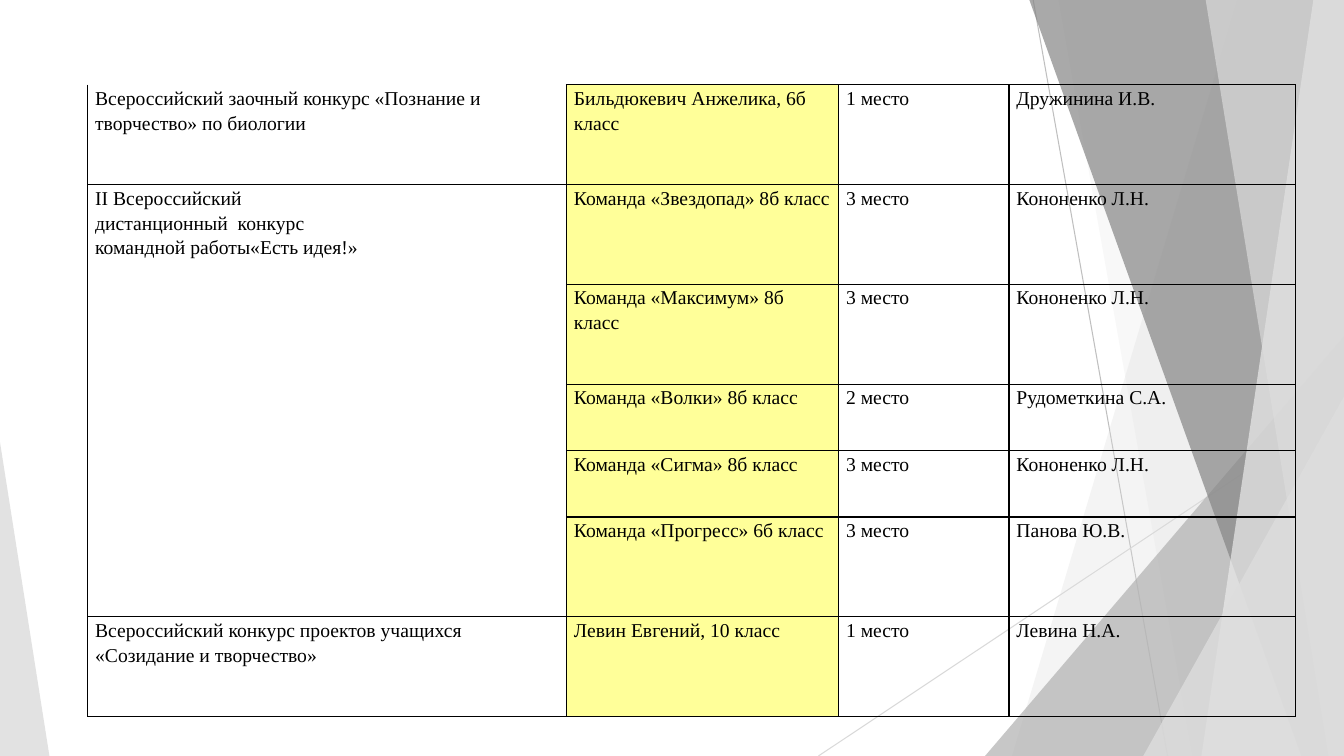
from lxml import etree
from pptx import Presentation
from pptx.dml.color import RGBColor
from pptx.enum import shapes as kinds
from pptx.oxml import ns
from pptx.util import Pt

WIDTH, HEIGHT = 960, 540
FONT = "Times New Roman"
COLORS = {
    "ink": "000000",
    "yellow": "FFFF99",
    "line_dark": "BFBFBF",
    "line_light": "D9D9D9",
    "light": "DDDDDD",
    "pale": "EBEBEB",
    "middle": "B2B2B2",
    "dark": "858585",
}
COLUMNS = [342, 194.4, 121.7, 204.5]
HEIGHTS = [71.3, 71.3, 71.3, 47.5, 47.5, 71.3, 71.3]
TEAM_CONTEST = "II Всероссийский\nдистанционный  конкурс\nкомандной работы«Есть идея!»"
RESULTS = [
    ("Всероссийский заочный конкурс «Познание и творчество» по биологии",
     "Бильдюкевич Анжелика, 6б класс", "1 место", "Дружинина И.В."),
    (TEAM_CONTEST, "Команда «Звездопад» 8б класс", "3 место", "Кононенко Л.Н."),
    ("", "Команда «Максимум» 8б класс", "3 место", "Кононенко Л.Н."),
    ("", "Команда «Волки» 8б класс", "2 место", "Рудометкина С.А."),
    ("", "Команда «Сигма» 8б класс", "3 место", "Кононенко Л.Н."),
    ("", "Команда «Прогресс» 6б класс", "3 место", "Панова Ю.В."),
    ("Всероссийский конкурс проектов учащихся «Созидание и творчество»",
     "Левин Евгений, 10 класс", "1 место", "Левина Н.А."),
]


def color(name):
    return RGBColor.from_string(COLORS[name])


def add_line(slide, start, end, color_name):
    line = slide.shapes.add_connector(
        kinds.MSO_CONNECTOR.STRAIGHT, *map(Pt, start + end))
    line.line.color.rgb = color(color_name)
    line.line.width = Pt(0.75)
    etree.SubElement(line._element.spPr, ns.qn("a:effectLst"))


def paint(shape, color_name, opacity):
    shape.shadow.inherit = False
    shape.line.fill.background()
    shape.fill.solid()
    shape.fill.fore_color.rgb = color(color_name)
    tint = shape._element.spPr.find(".//" + ns.qn("a:srgbClr"))
    etree.SubElement(tint, ns.qn("a:alpha"), val=str(opacity * 1000))


def add_band(slide, top_x, bottom_x, color_name, opacity):
    top = -0.6
    builder = slide.shapes.build_freeform(Pt(top_x), Pt(top))
    corners = [(WIDTH, top), (WIDTH, HEIGHT), (bottom_x, HEIGHT)]
    builder.add_line_segments([(Pt(x), Pt(y)) for x, y in corners], close=True)
    paint(builder.convert_to_shape(), color_name, opacity)


def add_triangle(slide, left, top, width, apex, color_name, opacity):
    shape = slide.shapes.add_shape(
        kinds.MSO_SHAPE.ISOSCELES_TRIANGLE,
        Pt(left), Pt(top), Pt(width), Pt(HEIGHT - top))
    shape.adjustments[0] = apex
    paint(shape, color_name, opacity)


def set_borders(cell, visible):
    properties = cell._tc.get_or_add_tcPr()
    for position, side in enumerate("LRTB"):
        border = etree.Element(ns.qn("a:ln" + side), w=str(Pt(1)))
        if side in visible:
            fill = etree.SubElement(border, ns.qn("a:solidFill"))
            etree.SubElement(fill, ns.qn("a:srgbClr"), val=COLORS["ink"])
        else:
            etree.SubElement(border, ns.qn("a:noFill"))
        properties.insert(position, border)


def write_cell(cell, content):
    cell.margin_left = cell.margin_right = Pt(5.4)
    cell.margin_top = cell.margin_bottom = Pt(0)
    frame = cell.text_frame
    for index, words in enumerate(content.split("\n")):
        paragraph = frame.add_paragraph() if index else frame.paragraphs[0]
        paragraph.line_spacing = 1.15
        if words:
            run = paragraph.add_run()
            run.text = words
            run.font.name = FONT
            run.font.size = Pt(14)
            run.font.color.rgb = color("ink")


def contest_borders(row):
    starts_contest = row > 0 and RESULTS[row][0]
    ends_contest = row + 1 == len(RESULTS) or RESULTS[row + 1][0]
    return "LR" + ("T" if starts_contest else "") + ("B" if ends_contest else "")


def add_results(slide):
    table = slide.shapes.add_table(
        len(RESULTS), len(COLUMNS), Pt(62.6), Pt(60.5),
        Pt(sum(COLUMNS)), Pt(sum(HEIGHTS))).table
    table.first_row = table.horz_banding = False
    for column, width in zip(table.columns, COLUMNS):
        column.width = Pt(width)
    for row, (contents, height) in enumerate(zip(RESULTS, HEIGHTS)):
        table.rows[row].height = Pt(height)
        for column, content in enumerate(contents):
            cell = table.cell(row, column)
            write_cell(cell, content)
            if column == 1:
                cell.fill.solid()
                cell.fill.fore_color.rgb = color("yellow")
            else:
                cell.fill.background()
            set_borders(cell, "LRTB" if column else contest_borders(row))


def add_backdrop(slide):
    add_line(slide, (738, 0), (834, HEIGHT), "line_dark")
    add_line(slide, (WIDTH, 290), (584.6, HEIGHT), "line_light")
    add_band(slide, 884.2, 722.9, "light", 30)
    add_band(slide, 756, 851.8, "light", 20)
    add_triangle(slide, 703.6, 240, 256.4, 1, "middle", 72)
    add_band(slide, 735.1, 929.5, "dark", 70)
    add_band(slide, 938.2, 858.2, "pale", 70)
    add_band(slide, 861.1, 949, "light", 65)
    add_triangle(slide, 816.6, 283, 143.4, 1, "light", 80)
    add_triangle(slide, 0, 316, 35.3, 0, "light", 85)


def main():
    presentation = Presentation()
    presentation.slide_width = Pt(WIDTH)
    presentation.slide_height = Pt(HEIGHT)
    slide = presentation.slides.add_slide(presentation.slide_layouts[6])
    add_backdrop(slide)
    add_results(slide)
    presentation.save("out.pptx")


if __name__ == "__main__":
    main()
